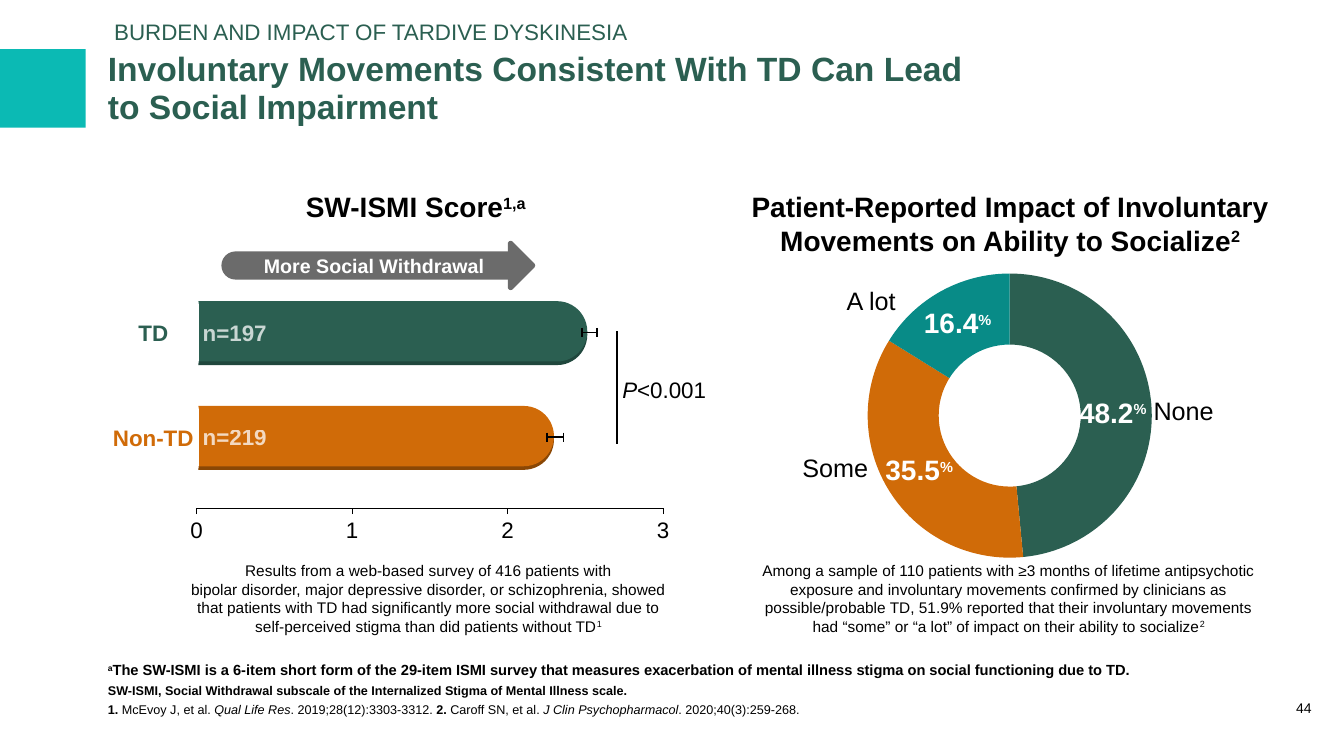
from lxml.etree import SubElement
from pptx import Presentation
from pptx.chart.data import CategoryChartData
from pptx.dml.color import RGBColor
from pptx.enum.chart import XL_CHART_TYPE as ChartType, XL_TICK_MARK as Tick
from pptx.enum.shapes import MSO_CONNECTOR as Connector, MSO_SHAPE as Shape
from pptx.enum.text import MSO_ANCHOR as Anchor, MSO_AUTO_SIZE as AutoSize, PP_ALIGN as Align
from pptx.oxml.ns import qn
from pptx.util import Cm, Pt

GREEN, ORANGE, TEAL, GREY = "2B5F51", "D06B08", "088B87", "6B6B6B"
BLACK, WHITE = "000000", "FFFFFF"
SUPER = {"baseline": 30}
BOLD, PLAIN, ITALIC = {"bold": True}, {"bold": False}, {"bold": False, "italic": True}


def paint(color, value):
    color.rgb = RGBColor.from_string(value)


def box(*lengths):
    return [Cm(length) for length in lengths]


class Page:
    """Hold the style and the slide, and add each kind of element."""

    font_name = "Arial"

    def __init__(self, presentation):
        self.slide = presentation.slides.add_slide(presentation.slide_layouts[5])
        self.shapes = self.slide.shapes

    def style(self, font, size, color=BLACK, **values):
        values = {"name": self.font_name, "size": Pt(size), **values}
        for name, value in values.items():
            setattr(font, name, value)
        paint(font.color, color)

    def add_run(self, paragraph, words, baseline=0, alpha=None, **values):
        for index, part in enumerate(words.split("\n")):
            if index:
                paragraph.add_line_break()
            run = paragraph.add_run()
            run.text = part
            self.style(run.font, **values)
            properties = run.font._element
            if baseline:
                properties.set("baseline", str(baseline * 1000))
            if alpha:
                color = properties.find(qn("a:solidFill"))[0]
                SubElement(color, qn("a:alpha")).set("val", str(alpha * 1000))

    def fill_text(self, shape, paragraphs, wrap=True, anchor=Anchor.TOP, inset=True,
                  align=Align.CENTER, spacing=None, after=None, **values):
        frame = shape.text_frame
        settings = {"word_wrap": wrap, "vertical_anchor": anchor, "auto_size": AutoSize.NONE}
        if not inset:
            settings |= dict.fromkeys(
                ("margin_left", "margin_right", "margin_top", "margin_bottom"), 0)
        for name, value in settings.items():
            setattr(frame, name, value)
        if isinstance(paragraphs, str):
            paragraphs = [[(paragraphs, {})]]
        for index, runs in enumerate(paragraphs):
            paragraph = frame.add_paragraph() if index else frame.paragraphs[0]
            layout = {"alignment": align, "line_spacing": spacing, "space_after": after}
            for name, value in layout.items():
                if value is not None:
                    setattr(paragraph, name, value)
            for words, changes in runs:
                self.add_run(paragraph, words, **{**values, **changes})

    def title(self, place, words, **values):
        shape = self.shapes.title
        shape.left, shape.top, shape.width, shape.height = box(*place)
        self.fill_text(shape, words, **values)

    def text(self, place, paragraphs, **values):
        self.fill_text(self.shapes.add_textbox(*box(*place)), paragraphs, **values)

    def fill(self, shape, color):
        shape.shadow.inherit = False
        shape.fill.solid()
        paint(shape.fill.fore_color, color)
        shape.line.fill.background()
        return shape

    def shape(self, kind, place, color):
        return self.fill(self.shapes.add_shape(kind, *box(*place)), color)

    def rounded_bar(self, left, middle, length, height, color, rotation=90):
        place = (left + (length - height) / 2, middle - length / 2, height, length)
        bar = self.shape(Shape.ROUND_2_SAME_RECTANGLE, place, color)
        bar.adjustments[0], bar.adjustments[1] = 0.5, 0
        bar.rotation = rotation

    def outline(self, points, color):
        builder = self.shapes.build_freeform(*points[0], scale=Cm(0.01))
        builder.add_line_segments(points[1:], close=True)
        self.fill(builder.convert_to_shape(), color)

    def line(self, *ends):
        line = self.shapes.add_connector(Connector.STRAIGHT, *box(*ends))
        line.line.width = Pt(1.25)
        paint(line.line.color, BLACK)
        SubElement(line._element.spPr, qn("a:effectLst"))

    def chart(self, kind, place, categories, values, plot_area):
        data = CategoryChartData()
        data.categories = categories
        data.add_series("Series 1", values)
        chart = self.shapes.add_chart(kind, *box(*place), data).chart
        chart.has_legend = chart.has_title = False
        self.style(chart.font, 10)
        area = chart._chartSpace.chart.plotArea
        for old in area.findall(qn("c:layout")):
            area.remove(old)
        layout = SubElement(area, qn("c:layout"))
        area.insert(0, layout)
        manual = SubElement(layout, qn("c:manualLayout"))
        settings = {"layoutTarget": "inner", "xMode": "edge", "yMode": "edge",
                    **dict(zip("xywh", plot_area))}
        for name, value in settings.items():
            SubElement(manual, qn(f"c:{name}")).set("val", str(value))
        return chart


def add_impact_chart(page):
    chart = page.chart(ChartType.DOUGHNUT, (17.7, 6.5, 15.34, 7.87), ["1", "2", "3"],
                       [48, 35, 16], (0.27, 0.05, 0.47, 0.91))
    for index, color in enumerate((GREEN, ORANGE, TEAL)):
        fill = chart.plots[0].series[0].points[index].format.fill
        fill.solid()
        paint(fill.fore_color, color)


def add_score_axis(page):
    chart = page.chart(ChartType.BAR_CLUSTERED, (4.17, 5.77, 13.06, 8), ["1"], [2.52],
                       (0.06, 0.05, 0.9, 0.83))
    plot = chart.plots[0]
    plot.gap_width, plot.vary_by_categories = 219, False
    fill = plot.series[0].format.fill
    fill.solid()
    paint(fill.fore_color, WHITE)
    chart.category_axis.visible = False
    axis = chart.value_axis
    settings = {"minimum_scale": 0, "maximum_scale": 3, "major_unit": 1,
                "has_major_gridlines": False, "major_tick_mark": Tick.OUTSIDE}
    for name, value in settings.items():
        setattr(axis, name, value)
    page.style(axis.tick_labels.font, 16)
    axis.format.line.width = Pt(0.5)
    paint(axis.format.line.color, BLACK)


def add_withdrawal_arrow(page):
    middle = 669
    upper = [(1201, 22), (1280, 22), (1280, 57), (1283, 61), (1287, 62), (1291, 61), (1347, 5)]
    points = [(x, middle - y) for x, y in upper] + [(1349, middle)]
    points += [(x, middle + y) for x, y in reversed(upper)]
    page.outline(points, GREY)
    page.rounded_bar(5.58, 6.69, 7.34, 0.71, GREY, rotation=270)
    page.text((7.26, 6.43, 4.34, 0.51), "More Social Withdrawal", wrap=False, inset=False,
              anchor=Anchor.MIDDLE, size=14, color=WHITE, bold=True)


def add_score_bar(page, label, count, middle, length, color, edge, low, high):
    page.rounded_bar(4.74, middle + 0.06, length, 1.52, edge)
    page.rounded_bar(4.74, middle - 0.03, length, 1.52, color)
    tag = page.shape(Shape.ROUNDED_RECTANGLE, (2.72, middle - 1.2, 2.29, 2.4), WHITE)
    tag.adjustments[0] = 0.21
    page.fill_text(tag, label, wrap=False, inset=False, anchor=Anchor.MIDDLE,
                   spacing=Pt(19), size=16, color=color, bold=True)
    page.line(low, middle, high, middle)
    for end in (low, high):
        page.line(end, middle - 0.12, end, middle + 0.12)
    page.text((4.85, middle - 0.47, 2.13, 0.94), count, wrap=False,
              size=16, color=WHITE, alpha=75, bold=True)


def main():
    presentation = Presentation()
    presentation.slide_width, presentation.slide_height = box(33.87, 19.05)
    page = Page(presentation)

    page.shape(Shape.RECTANGLE, (0, 1.24, 2.16, 1.98), "0BBAB4")
    header = {"inset": False, "anchor": Anchor.MIDDLE, "align": Align.LEFT,
              "spacing": 0.95, "color": GREEN}
    page.title((2.72, 0.99, 25.04, 2.51),
               "Involuntary Movements Consistent With TD Can Lead\nto Social Impairment",
               size=24, bold=True, **header)
    page.text((2.88, 0.46, 25.9, 0.71), "BURDEN AND IMPACT OF TARDIVE DYSKINESIA",
              size=16, **header)
    page.text((32.44, 16.97, 0.84, 1.09), "44", inset=False, anchor=Anchor.BOTTOM,
              spacing=0.95, size=10)

    captions = [
        (4.5, 12.6, "1", "Results from a web-based survey of 416 patients with\nbipolar disorder, "
         "major depressive disorder, or schizophrenia, showed that patients with TD had "
         "significantly more social withdrawal due to self-perceived stigma than did patients "
         "without TD"),
        (18.75, 13.34, "2", "Among a sample of 110 patients with ≥3 months of lifetime "
         "antipsychotic\nexposure and involuntary movements confirmed by clinicians as "
         "possible/probable TD, 51.9% reported that their involuntary movements had “some” or "
         "“a lot” of impact on their ability to socialize")]
    for left, width, mark, words in captions:
        page.text((left, 14.02, width, 2.13), [[(words, {}), (mark, SUPER)]], size=11)

    add_impact_chart(page)
    add_score_axis(page)
    headings = [
        (2.81, 1.12, "1,a", "SW-ISMI Score"),
        (17.79, 1.96, "2",
         "Patient-Reported Impact of Involuntary\nMovements on Ability to Socialize")]
    for left, height, mark, words in headings:
        page.text((left, 4.65, 15.34, height), [[(words, {}), (mark, SUPER)]], size=20, bold=True)

    page.text((15.42, 9.35, 2.64, 0.94), [[("P", {"italic": True}), ("<0.001", {})]],
              wrap=False, size=16)
    page.line(15.54, 11.18, 15.54, 8.33)
    add_withdrawal_arrow(page)
    add_score_bar(page, "Non-TD", "n=219", 11.02, 9.22, ORANGE, "8A4705", 13.79, 14.2)
    add_score_bar(page, "TD", "n=197", 8.38, 10.06, GREEN, "20473D", 14.66, 15.04)

    answers = [("16.4", 22.99, 7.57, "A lot", 21.08, 7.06, 1.75),
               ("35.5", 22.02, 11.28, "Some", 19.96, 11.28, 2.18),
               ("48.2", 26.9, 9.83, "None", 28.8, 9.83, 2.06)]
    for share, left, top, answer, answer_left, answer_top, width in answers:
        page.text((left, top, 2.29, 1.12), [[(share, {}), ("%", {"size": 18, "baseline": 32})]],
                  wrap=False, size=20, color=WHITE, bold=True)
        page.text((answer_left, answer_top, width, 1.02), answer, wrap=False, size=18)

    note = {"size": 10.5, **BOLD}
    footnotes = [
        [("a", {**note, **SUPER}),
         ("The SW-ISMI is a 6-item short form of the 29-item ISMI survey that measures "
          "exacerbation of mental illness stigma on social functioning due to TD.", note)],
        [("SW-ISMI, Social Withdrawal subscale of the Internalized Stigma of Mental Illness "
          "scale.", BOLD)],
        [("1. ", BOLD), ("McEvoy J, et al. ", PLAIN), ("Qual Life Res", ITALIC),
         (". 2019;28(12):3303-3312. ", PLAIN), ("2. ", BOLD), ("Caroff SN, et al. ", PLAIN),
         ("J Clin Psychopharmacol", ITALIC), (". 2020;40(3):259-268.", PLAIN)]]
    page.text((2.72, 16.66, 29.36, 1.42), footnotes, inset=False, anchor=Anchor.BOTTOM,
              align=Align.LEFT, after=Pt(3), size=9)
    presentation.save("out.pptx")


if __name__ == "__main__":
    main()
